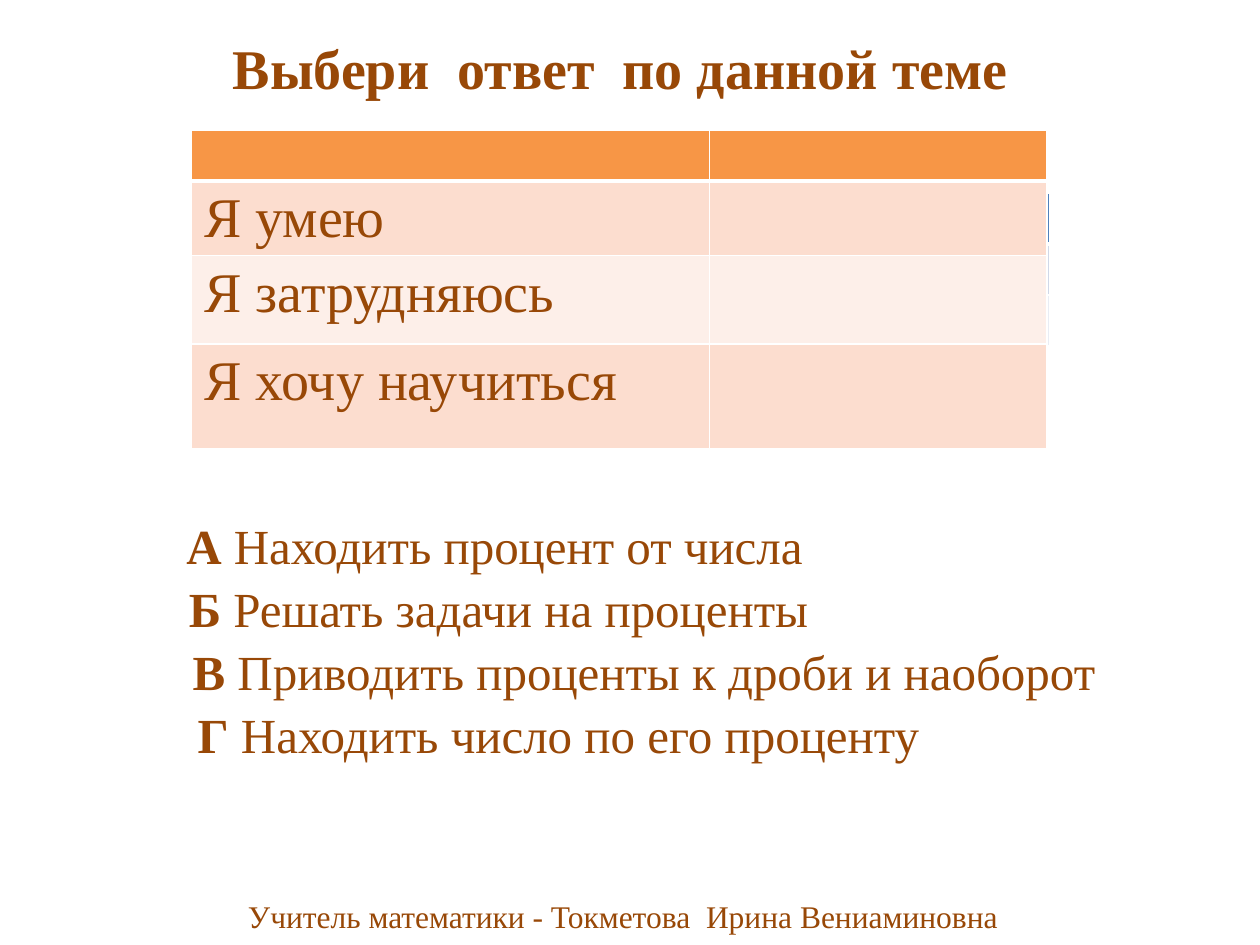
from lxml.etree import SubElement
from pptx import Presentation
from pptx.dml.color import RGBColor
from pptx.enum.text import MSO_AUTO_SIZE, PP_ALIGN
from pptx.oxml.ns import qn
from pptx.util import Inches, Pt

WIDTH, HEIGHT = 10, 7.5
FONT = "Times New Roman"
COLORS = {
    "text": "984807", "border": "FFFFFF",
    "blue": ("4F81BD", "D0D8E8", "E9EDF4"),
    "orange": ("F79646", "FCDDCF", "FDEFE9"),
}

# Content
TITLE = "Выбери  ответ  по данной теме"
FOOTER = "Учитель математики - Токметова  Ирина Вениаминовна"
SKILLS = ["", "Я умею", "Я затрудняюсь", "Я хочу научиться"]
# Letter, answer, left and width in percent of the slide
ANSWERS = [
    ("А", "Находить процент от числа", 13.8, 51.5),
    ("Б", "Решать задачи на проценты", 14, 51.7),
    ("В", "Приводить проценты к дроби и наоборот", 14.3, 74.5),
    ("Г", "Находить число по его проценту", 14.7, 59.9),
]
ANSWER_TOP, ANSWER_STEP, ANSWER_HEIGHT = 53.87, 6.67, 7.6


def across(percent):
    return Inches(WIDTH * percent / 100)


def down(percent):
    return Inches(HEIGHT * percent / 100)


def write(frame, *spans, size, align=PP_ALIGN.LEFT):
    """Fill the first paragraph with (text, bold) spans."""
    para = frame.paragraphs[0]
    para.alignment = align
    for text, bold in spans:
        span = para.add_run()
        span.text = text
        span.font.name = FONT
        span.font.size = Pt(size)
        span.font.bold = bold
        span.font.color.rgb = RGBColor.from_string(COLORS["text"])


def add_text(page, left, top, width, height, *spans, wrap=True, **text_format):
    box = page.shapes.add_textbox(across(left), down(top), across(width), down(height))
    box.text_frame.word_wrap = wrap
    box.text_frame.auto_size = MSO_AUTO_SIZE.SHAPE_TO_FIT_TEXT
    write(box.text_frame, *spans, **text_format)


def set_borders(cell, row):
    """White lines, thick between the header and the body."""
    widths = {"L": 1, "R": 1, "T": 3 if row == 1 else 1, "B": 3 if row == 0 else 1}
    properties = cell._tc.get_or_add_tcPr()
    for side, width in widths.items():
        line = SubElement(properties, qn(f"a:ln{side}"), w=str(Pt(width)))
        fill = SubElement(line, qn("a:solidFill"))
        SubElement(fill, qn("a:srgbClr"), val=COLORS["border"])


def add_grid(page, left, top, columns, rows, palette, labels=()):
    header, *bands = COLORS[palette]
    table = page.shapes.add_table(
        len(rows), len(columns), across(left), down(top),
        across(sum(columns)), down(sum(rows))).table
    table.first_row = table.horz_banding = False
    for column, width in zip(table.columns, columns):
        column.width = across(width)
    for index, (row, height) in enumerate(zip(table.rows, rows)):
        row.height = down(height)
        for cell in row.cells:
            set_borders(cell, index)
            cell.fill.solid()
            color = bands[(index - 1) % 2] if index else header
            cell.fill.fore_color.rgb = RGBColor.from_string(color)
    for index, label in enumerate(labels):
        if label:
            write(table.cell(index, 0).text_frame, (label, False), size=32)


deck = Presentation()
deck.slide_width, deck.slide_height = Inches(WIDTH), Inches(HEIGHT)
page = deck.slides.add_slide(deck.slide_layouts[6])

# Tables: the blue one shows only at the right edge of the orange one
add_grid(page, 16.7, 20.4, [33.3, 33.3], [5.4] * 3, "blue")
add_grid(page, 15.2, 13.73, [41.1, 26.8], [4.93, 7.73, 9.33, 11.07], "orange", SKILLS)

# Title
add_text(page, 9.7, 2.93, 79.1, 8.53, (TITLE, True), size=32, align=PP_ALIGN.CENTER)

# Answers
for index, (letter, answer, left, width) in enumerate(ANSWERS):
    add_text(page, left, ANSWER_TOP + index * ANSWER_STEP, width, ANSWER_HEIGHT,
             (letter, True), (f" {answer}", False), size=28, wrap=False)

# Footer
add_text(page, 15.7, 94.27, 67.5, 5.33, (FOOTER, False), size=18, align=PP_ALIGN.CENTER)

deck.save("out.pptx")
